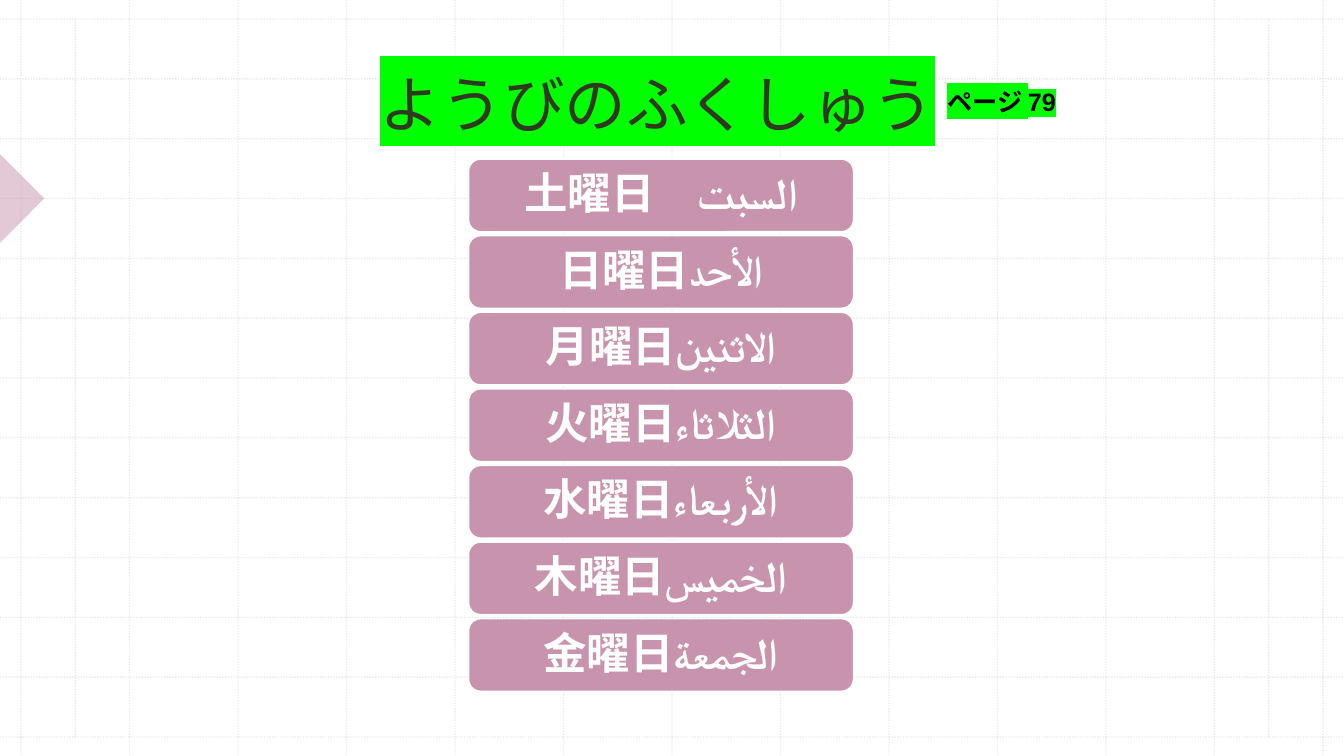
from lxml import etree
from pptx import Presentation
from pptx.dml.color import RGBColor
from pptx.enum import dml, shapes, text
from pptx.oxml import ns
from pptx.util import Cm, Pt

WHITE = RGBColor(0xFF, 0xFF, 0xFF)
BLACK = RGBColor(0x00, 0x00, 0x00)
OLIVE = RGBColor(0x31, 0x38, 0x20)
ROSE = RGBColor(0xC8, 0x94, 0xAD)
GREY = RGBColor(0xBC, 0xBC, 0xBC)
GREEN = RGBColor(0x00, 0xFF, 0x00)

WIDTH, HEIGHT = 33.87, 19.05
DAYS = ["土曜日　السبت", "日曜日الأحد", "月曜日الاثنين", "火曜日الثلاثاء",
        "水曜日الأربعاء", "木曜日الخميس", "金曜日الجمعة"]


def set_alpha(fill_owner, percent):
    color = next(fill_owner.iter(ns.qn("a:srgbClr")))
    etree.SubElement(color, ns.qn("a:alpha")).set("val", str(percent * 1000))


def add_span(para, words, font, size, color, bold=False, highlight=None):
    span = para.add_run()
    span.text = words
    span.font.name, span.font.size, span.font.bold = font, Pt(size), bold
    span.font.color.rgb = color
    if highlight is not None:
        mark = etree.Element(ns.qn("a:highlight"))
        etree.SubElement(mark, ns.qn("a:srgbClr")).set("val", str(highlight))
        span._r.get_or_add_rPr().find(ns.qn("a:solidFill")).addnext(mark)


def add_grid_line(page, x1, y1, x2, y2):
    line = page.shapes.add_connector(
        shapes.MSO_CONNECTOR.STRAIGHT, Cm(x1), Cm(y1), Cm(x2), Cm(y2))
    line.line.color.rgb = GREY
    line.line.width = Pt(1)
    line.line.dash_style = dml.MSO_LINE.ROUND_DOT
    set_alpha(line._element.spPr, 30)
    etree.SubElement(line._element.spPr, ns.qn("a:effectLst"))


def add_backdrop(page, width, height):
    # Dotted grid, twelve cells each way
    side, top, cells = 0.53, 0.48, 12
    for i in range(cells + 1):
        x = side + i * (width - 2 * side) / cells
        y = top + i * (height - 2 * top) / cells
        add_grid_line(page, x, 0, x, height)
        add_grid_line(page, 0, y, width, y)
    # Margin lines
    for x in (1.9, width - 1.9):
        add_grid_line(page, x, top, x, height - top)
    # Pointer on the left edge
    pointer = page.shapes.add_shape(
        shapes.MSO_SHAPE.RIGHT_TRIANGLE, Cm(-0.79), Cm(4.21), Cm(1.58), Cm(1.58))
    pointer.rotation = 225
    pointer.shadow.inherit = False
    pointer.fill.solid()
    pointer.fill.fore_color.rgb = ROSE
    set_alpha(pointer._element.spPr, 50)
    pointer.line.fill.background()


def add_heading(page, left, top, width, height):
    title = page.shapes.title
    page.shapes._spTree.append(title._element)  # in front of the grid
    title.left, title.top, title.width, title.height = map(
        Cm, (left, top, width, height))
    frame = title.text_frame
    frame.auto_size = text.MSO_AUTO_SIZE.NONE
    frame.vertical_anchor = text.MSO_ANCHOR.BOTTOM
    frame.margin_bottom = 0
    para = frame.paragraphs[0]
    para.alignment = text.PP_ALIGN.LEFT
    add_span(para, "ようびのふくしゅう", "Roboto", 44, OLIVE, highlight=GREEN)
    # Page reference beside the title
    box = page.shapes.add_textbox(
        Cm(left + 14.3), Cm(top + 1.5), Cm(7.11), Cm(1.02))
    box.text_frame.word_wrap = True
    add_span(box.text_frame.paragraphs[0], "ページ 79", "Arial", 18, BLACK,
             bold=True, highlight=GREEN)


def add_days(page, left, top, width, height):
    pitch = height / len(DAYS)
    for i, day in enumerate(DAYS):
        bar = page.shapes.add_shape(
            shapes.MSO_SHAPE.ROUNDED_RECTANGLE,
            Cm(left), Cm(top + i * pitch), Cm(width), Cm(pitch - 0.1))
        bar.shadow.inherit = False
        bar.fill.solid()
        bar.fill.fore_color.rgb = ROSE
        bar.line.color.rgb = WHITE
        bar.line.width = Pt(1)
        frame = bar.text_frame
        frame.word_wrap = True
        frame.vertical_anchor = text.MSO_ANCHOR.MIDDLE
        frame.margin_left = frame.margin_right = Cm(0.4)
        frame.margin_top = frame.margin_bottom = Cm(0.2)
        para = frame.paragraphs[0]
        para.alignment = text.PP_ALIGN.CENTER
        para.line_spacing = 0.9
        add_span(para, day, "Roboto", 31, WHITE, bold=True)


def main():
    deck = Presentation()
    deck.slide_width, deck.slide_height = Cm(WIDTH), Cm(HEIGHT)
    page = deck.slides.add_slide(deck.slide_layouts[5])
    page.background.fill.solid()
    page.background.fill.fore_color.rgb = WHITE
    add_backdrop(page, WIDTH, HEIGHT)
    add_heading(page, 9.32, 0.56, 24.5, 2.97)
    add_days(page, 11.81, 4.01, 9.7, 13.51)
    deck.save("out.pptx")


if __name__ == "__main__":
    main()
